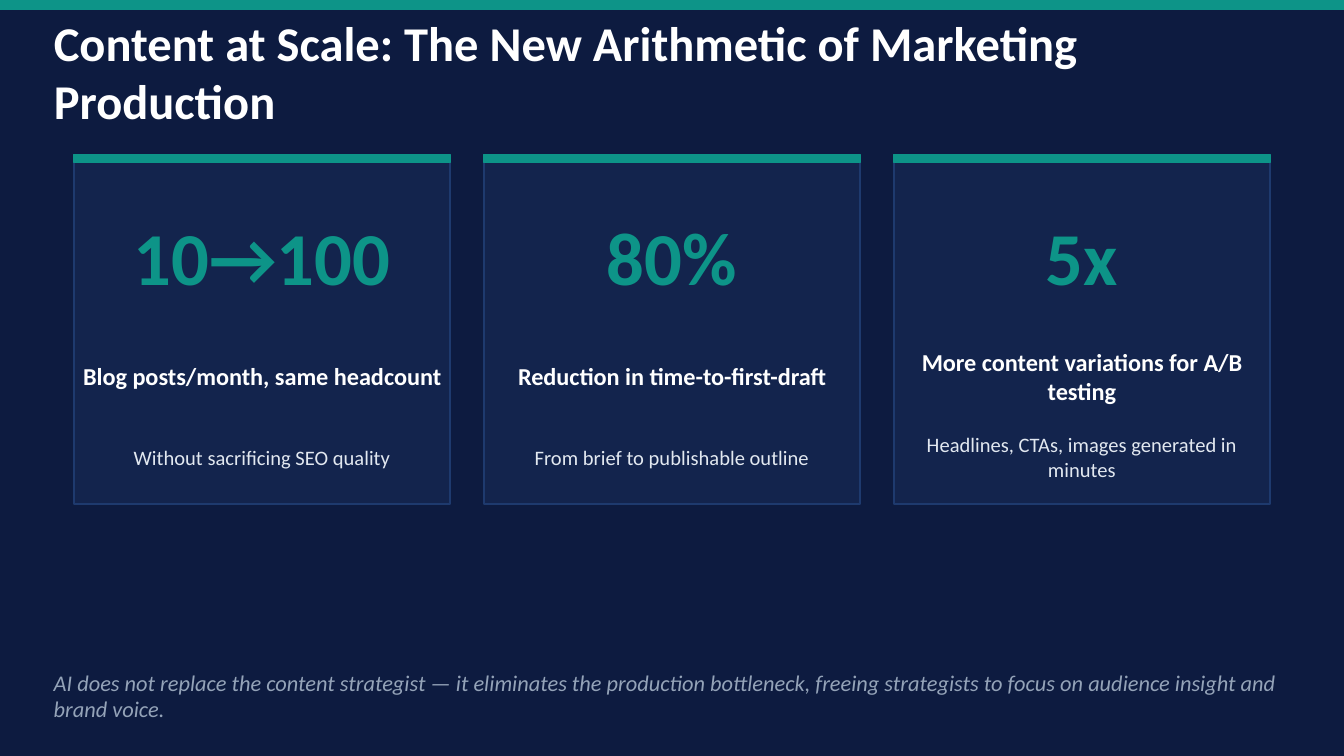
from pptx import Presentation
from pptx import util as u
from pptx.dml.color import RGBColor
from pptx.enum import shapes, text

NAVY = RGBColor(0x0D, 0x1B, 0x40)
CARD_BLUE = RGBColor(0x13, 0x24, 0x4D)
EDGE_BLUE = RGBColor(0x1E, 0x3A, 0x6E)
TEAL = RGBColor(0x0D, 0x94, 0x88)
WHITE = RGBColor(0xFF, 0xFF, 0xFF)
PALE = RGBColor(0xE2, 0xE8, 0xF0)
GREY = RGBColor(0x94, 0xA3, 0xB8)

FONT = "Calibri"
CELL = u.Inches(0.05)  # the grid has 200 columns across the slide
COLUMNS = 200
MARGIN = 8
CONTENT_WIDTH = COLUMNS - 2 * MARGIN

CARDS = [
    ("10→100", "Blog posts/month, same headcount", "Without sacrificing SEO quality"),
    ("80%", "Reduction in time-to-first-draft", "From brief to publishable outline"),
    ("5x", "More content variations for A/B testing",
     "Headlines, CTAs, images generated in minutes"),
]


def on_grid(box):
    """Turn (column, row, columns, rows) into slide lengths."""
    return [round(cells * CELL) for cells in box]


def write(shape, words, size, color, bold=False, italic=False,
          align=text.PP_ALIGN.LEFT):
    frame = shape.text_frame
    frame.word_wrap = True
    frame.auto_size = text.MSO_AUTO_SIZE.NONE
    frame.vertical_anchor = text.MSO_ANCHOR.MIDDLE
    frame.margin_left = frame.margin_top = 0
    frame.margin_right = frame.margin_bottom = 0
    paragraph = frame.paragraphs[0]
    paragraph.alignment = align
    run = paragraph.add_run()
    run.text = words
    run.font.name = FONT
    run.font.size = u.Pt(size)
    run.font.bold = bold
    run.font.italic = italic
    run.font.color.rgb = color


def add_text(slide, box, words, **format_options):
    write(slide.shapes.add_textbox(*on_grid(box)), words, **format_options)


def add_rectangle(slide, box, fill, line):
    shape = slide.shapes.add_shape(shapes.MSO_SHAPE.RECTANGLE, *on_grid(box))
    shape.shadow.inherit = False
    shape.fill.solid()
    shape.fill.fore_color.rgb = fill
    shape.line.color.rgb = line
    shape.line.width = u.Pt(1)


def add_header(slide, box, words):
    left, top, width, height = box
    add_rectangle(slide, (left, top, width, 1.4), TEAL, TEAL)
    title = slide.shapes.title
    title.left, title.top, title.width, title.height = on_grid(
        (left + MARGIN, top + 3.6, width - 2 * MARGIN, height - 3.6))
    write(title, words, size=26, color=WHITE, bold=True)


def add_card(slide, box, figure, label, detail):
    left, top, width, height = box
    add_rectangle(slide, box, CARD_BLUE, EDGE_BLUE)
    add_rectangle(slide, (left, top, width, 1.2), TEAL, TEAL)
    lines = [
        (5, 20, figure, 40, TEAL, True),
        (27, 12, label, 13, WHITE, True),
        (40, 10, detail, 11, PALE, False),
    ]
    for offset, rows, words, size, color, bold in lines:
        add_text(slide, (left, top + offset, width, rows), words, size=size,
                 color=color, bold=bold, align=text.PP_ALIGN.CENTER)


def add_card_row(slide, box, cards, gap):
    left, top, width, height = box
    card_width = (width - gap * (len(cards) - 1)) / len(cards)
    for index, card in enumerate(cards):
        card_left = left + index * (card_width + gap)
        add_card(slide, (card_left, top, card_width, height), *card)


def main():
    presentation = Presentation()
    presentation.slide_width = COLUMNS * CELL
    presentation.slide_height = presentation.slide_width * 9 // 16
    title_only = presentation.slide_layouts[5]
    slide = presentation.slides.add_slide(title_only)
    slide.background.fill.solid()
    slide.background.fill.fore_color.rgb = NAVY

    add_header(slide, (0, 0, COLUMNS, 17.6),
               "Content at Scale: The New Arithmetic of Marketing Production")
    add_card_row(slide, (11, 23, 178, 52), CARDS, gap=5)
    add_text(slide, (MARGIN, 98, CONTENT_WIDTH, 11),
             "AI does not replace the content strategist — it eliminates the "
             "production bottleneck, freeing strategists to focus on audience "
             "insight and brand voice.", size=12, color=GREY, italic=True)
    presentation.save("out.pptx")


if __name__ == "__main__":
    main()
